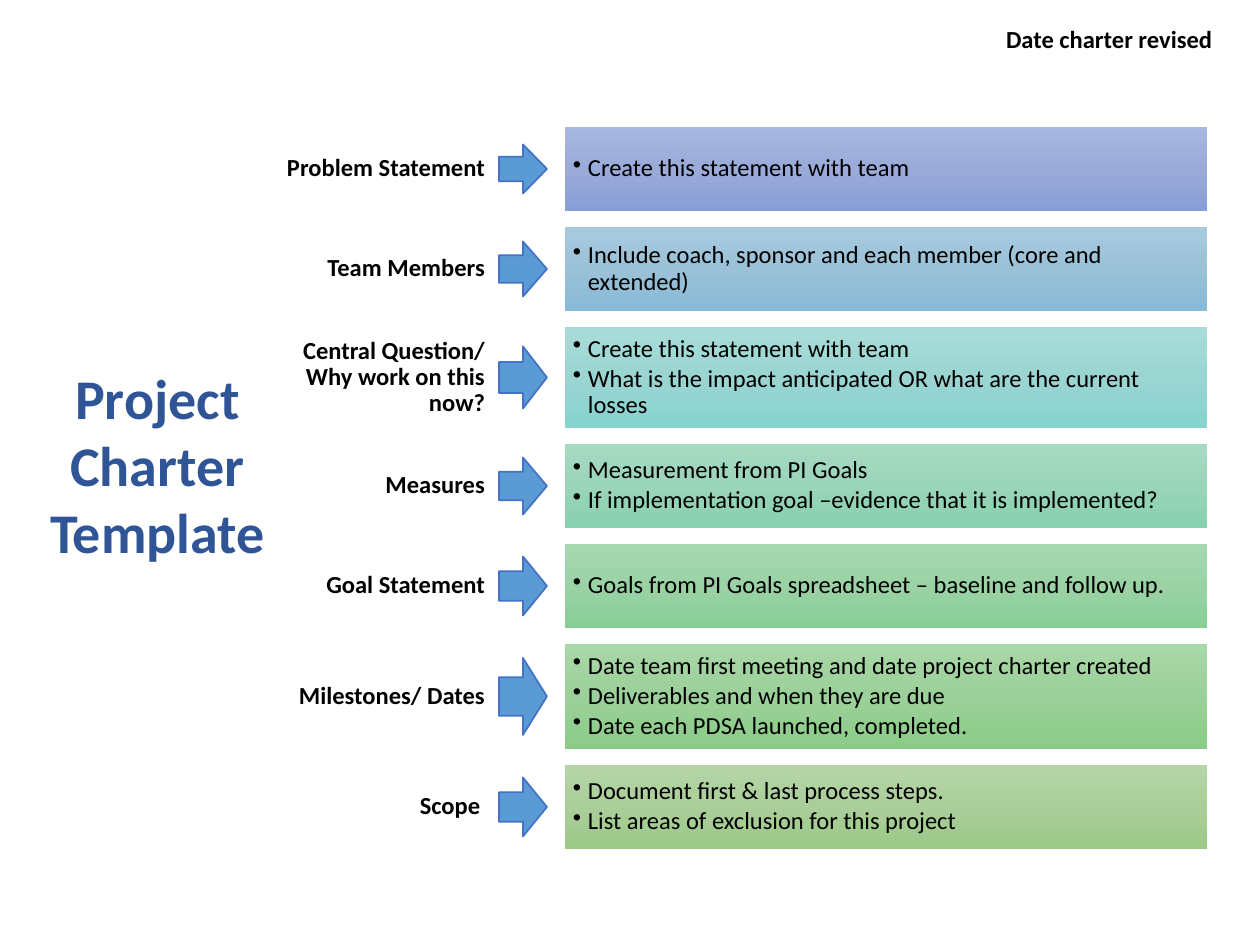
from copy import deepcopy

from lxml import etree
from pptx import Presentation
from pptx import util as u
from pptx.dml.color import RGBColor
from pptx.enum import shapes, text
from pptx.oxml.ns import qn

PX = 914400 / 126  # EMU in one px
FONT = "Calibri"
COLOURS = {"title": "2F5597", "text": "000000", "arrow": "5B9BD5", "arrow_line": "4472C4"}

FIRST_TOP, ROW_GAP = 127, 16
LABEL_LEFT, LABEL_WIDTH = 262, 237
ARROW_LEFT, ARROW_WIDTH = 499, 48
PANEL_LEFT, PANEL_WIDTH = 565, 642

# Label, panel height, arrow height, gradient from top to bottom, bullets
ROWS = [
    ("Problem Statement", 84, 49, ("A8B7DF", "9AABD9", "889ED7"),
     ["Create this statement with team"]),
    ("Team Members", 84, 55, ("A8CADE", "9AC1D7", "88B9D5"),
     ["Include coach, sponsor and each member (core and extended)"]),
    ("Central Question/ Why work on this now?", 101, 62, ("A8DCD9", "9AD5D2", "87D3CF"),
     ["Create this statement with team",
      "What is the impact anticipated OR what are the current losses"]),
    ("Measures", 84, 57, ("A8DAC3", "9AD4B9", "87D1AF"),
     ["Measurement from PI Goals",
      "If implementation goal –evidence that it is implemented?"]),
    ("Goal Statement", 84, 59, ("A7D8B1", "9AD2A5", "87CE96"),
     ["Goals from PI Goals spreadsheet – baseline and follow up."]),
    ("Milestones/ Dates", 105, 77, ("A9D7A7", "9CD09A", "8ACC87"),
     ["Date team first meeting and date project charter created",
      "Deliverables and when they are due",
      "Date each PDSA launched, completed."]),
    ("Scope", 84, 59, ("B5D5A7", "AACE9A", "9CC987"),
     ["Document first & last process steps.",
      "List areas of exclusion for this project"]),
]


def px(length):
    return u.Emu(round(length * PX))


def place(left, top, width, height):
    return px(left), px(top), px(width), px(height)


def set_frame(box, anchor, side, end):
    frame = box.text_frame
    frame.word_wrap = True
    frame.vertical_anchor = anchor
    frame.margin_left = frame.margin_right = px(side)
    frame.margin_top = frame.margin_bottom = px(end)
    return frame


def add_span(para, words, size=14, bold=False, colour="text"):
    span = para.add_run()
    span.text = words
    span.font.name = FONT
    span.font.size = u.Pt(size)
    span.font.bold = bold
    span.font.color.rgb = RGBColor.from_string(COLOURS[colour])


def add_bullet(para, words):
    properties = para._p.get_or_add_pPr()
    properties.set("marL", str(px(15)))
    properties.set("indent", str(-px(15)))
    etree.SubElement(properties, qn("a:buChar")).set("char", "•")
    para.level = 1
    para.alignment = text.PP_ALIGN.LEFT
    para.line_spacing = 0.9
    para.space_after = u.Pt(2)
    add_span(para, words)


def fill_gradient(shape, colours):
    shape.fill.gradient()
    shape.fill.gradient_angle = 270
    stops = shape._element.spPr.find(".//" + qn("a:gsLst"))
    stops.insert(1, deepcopy(stops[0]))
    for position, (stop, colour) in enumerate(zip(shape.fill.gradient_stops, colours)):
        stop.position = position / 2
        stop.color.rgb = RGBColor.from_string(colour)


def add_label(page, words, middle, height):
    box = page.shapes.add_textbox(
        *place(LABEL_LEFT, middle - height / 2, LABEL_WIDTH, height))
    frame = set_frame(box, text.MSO_ANCHOR.MIDDLE, 14, 5)
    para = frame.paragraphs[0]
    para.alignment = text.PP_ALIGN.RIGHT
    para.line_spacing = 0.9
    add_span(para, words, bold=True)
    if words == "Scope":
        add_span(para, " ", size=12)


def add_arrow(page, middle, height):
    arrow = page.shapes.add_shape(
        shapes.MSO_SHAPE.RIGHT_ARROW,
        *place(ARROW_LEFT, middle - height / 2, ARROW_WIDTH, height))
    arrow.shadow.inherit = False
    arrow.fill.solid()
    arrow.fill.fore_color.rgb = RGBColor.from_string(COLOURS["arrow"])
    arrow.line.color.rgb = RGBColor.from_string(COLOURS["arrow_line"])
    arrow.line.width = u.Pt(1)


def add_panel(page, top, height, colours, bullets):
    panel = page.shapes.add_shape(
        shapes.MSO_SHAPE.RECTANGLE, *place(PANEL_LEFT, top, PANEL_WIDTH, height))
    panel.shadow.inherit = False
    panel.line.fill.background()
    fill_gradient(panel, colours)
    frame = set_frame(panel, text.MSO_ANCHOR.MIDDLE, 8, 8)
    for index, words in enumerate(bullets):
        para = frame.add_paragraph() if index else frame.paragraphs[0]
        add_bullet(para, words)


def set_title(page):
    title = page.shapes.title
    title.left, title.top, title.width, title.height = place(0, 357, 315, 217)
    frame = set_frame(title, text.MSO_ANCHOR.TOP, 13, 6)
    frame.auto_size = text.MSO_AUTO_SIZE.SHAPE_TO_FIT_TEXT
    para = frame.paragraphs[0]
    para.alignment = text.PP_ALIGN.CENTER
    add_span(para, "Project Charter Template", 32, True, "title")


def add_date(page):
    box = page.shapes.add_textbox(*place(993, 18, 257, 43))
    frame = set_frame(box, text.MSO_ANCHOR.TOP, 13, 6)
    add_span(frame.paragraphs[0], "Date charter revised", bold=True)


def main():
    deck = Presentation()
    deck.slide_width, deck.slide_height = px(1260), px(945)
    page = deck.slides.add_slide(deck.slide_layouts.get_by_name("Title Only"))

    # Charter sections, stacked with equal gaps
    top = FIRST_TOP
    for label, height, arrow_height, colours, bullets in ROWS:
        middle = top + height / 2
        add_label(page, label, middle, min(height, 92))
        add_arrow(page, middle, arrow_height)
        add_panel(page, top, height, colours, bullets)
        top += height + ROW_GAP

    # Title and revision date
    set_title(page)
    add_date(page)
    deck.save("out.pptx")


if __name__ == "__main__":
    main()
